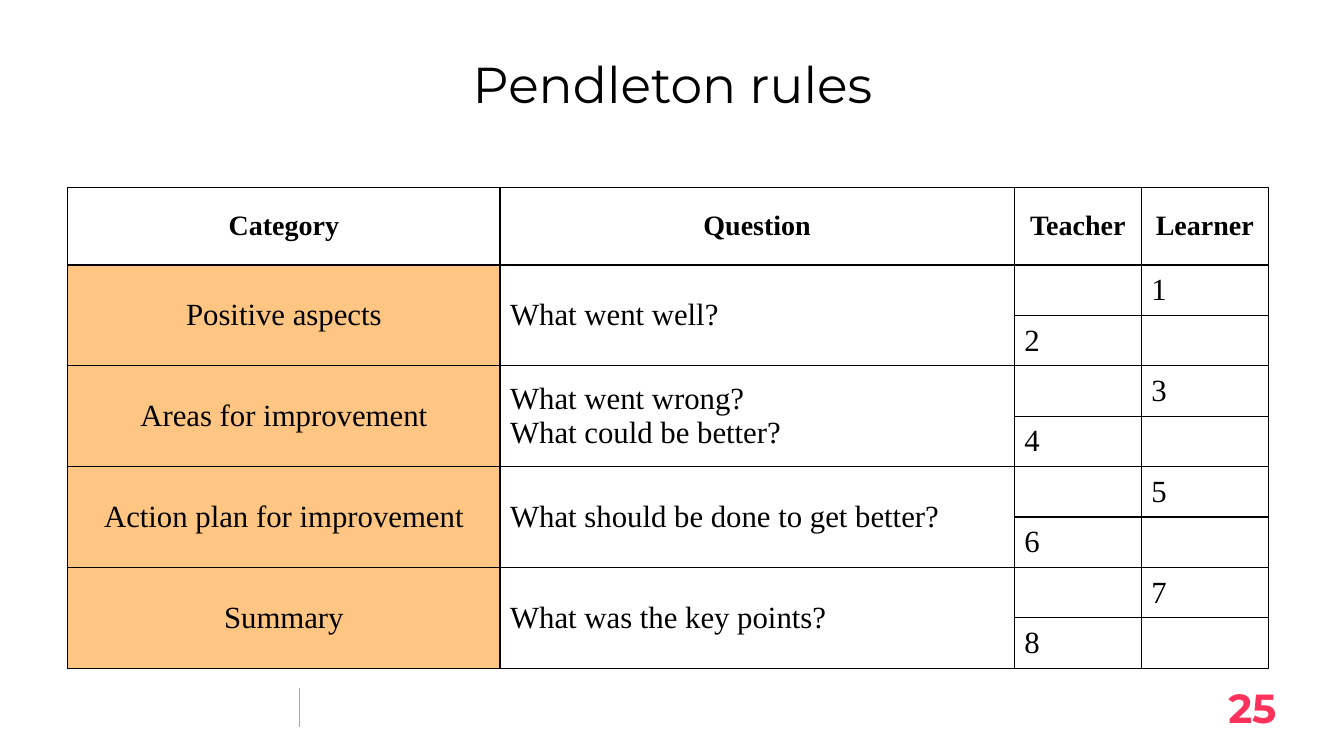
from lxml.etree import SubElement as Sub
from pptx import Presentation as Deck
from pptx.dml.color import RGBColor as RGB
from pptx.enum.shapes import MSO_CONNECTOR as Link
from pptx.enum.text import MSO_ANCHOR as Anchor, PP_ALIGN as Align
from pptx.oxml.ns import qn
from pptx.util import Inches, Pt

BLACK = RGB(0, 0, 0)
WHITE = RGB(255, 255, 255)
PEACH = RGB(0xFF, 0xC5, 0x82)
PINK = RGB(0xFE, 0x32, 0x5A)
GRAY = RGB(0xA6, 0xA6, 0xA6)
SANS = "Montserrat"
SERIF = "Times New Roman"
HEADS = ["Category", "Question", "Teacher", "Learner"]
TOPICS = [
    ("Positive aspects", "What went well?"),
    ("Areas for improvement", "What went wrong?\nWhat could be better?"),
    ("Action plan for improvement", "What should be done to get better?"),
    ("Summary", "What was the key points?"),
]
WIDTHS = [4.29, 5.1, 1.26, 1.26]
HEIGHTS = [0.77] + [0.5] * 8


def write(frame, text, size=22, font=SERIF, color=BLACK, bold=False, align=Align.LEFT):
    frame.text = text
    for para in frame.paragraphs:
        para.alignment = align
        face = para.font
        face.size, face.name, face.bold = Pt(size), font, bold
        face.color.rgb = color


def place(shape, left, top, width, height):
    shape.left, shape.top = Inches(left), Inches(top)
    shape.width, shape.height = Inches(width), Inches(height)


def label(shape, text, **style):
    frame = shape.text_frame
    frame.word_wrap = True
    frame.vertical_anchor = Anchor.MIDDLE
    frame.margin_left = frame.margin_right = 0
    frame.margin_top = frame.margin_bottom = Inches(0.07)
    write(frame, text, font=SANS, **style)


def rule(slide, left, top, end):
    line = slide.shapes.add_connector(
        Link.STRAIGHT, Inches(left), Inches(top), Inches(left), Inches(end))
    line.line.color.rgb = GRAY
    line.line.width = Pt(0.75)
    Sub(line.element.spPr, qn("a:effectLst"))


def border(cell):
    props = cell._tc.get_or_add_tcPr()
    for side in ("lnL", "lnR", "lnT", "lnB"):
        edge = Sub(props, qn("a:" + side), w=str(Pt(1)))
        fill = Sub(edge, qn("a:solidFill"))
        Sub(fill, qn("a:srgbClr"), val=str(BLACK))


def grid(slide):
    shape = slide.shapes.add_table(
        len(HEIGHTS), len(WIDTHS), Inches(0.67), Inches(1.86),
        Inches(sum(WIDTHS)), Inches(sum(HEIGHTS)))
    table = shape.table
    for col, width in zip(table.columns, WIDTHS):
        col.width = Inches(width)
    for row, height in zip(table.rows, HEIGHTS):
        row.height = Inches(height)
    for r in range(len(HEIGHTS)):
        for c in range(len(WIDTHS)):
            cell = table.cell(r, c)
            border(cell)
            cell.fill.solid()
            cell.fill.fore_color.rgb = PEACH if r and c == 0 else WHITE
            cell.vertical_anchor = Anchor.MIDDLE
    for c, head in enumerate(HEADS):
        write(table.cell(0, c).text_frame, head, size=20, bold=True, align=Align.CENTER)
    for i, pair in enumerate(TOPICS):
        top = 2 * i + 1
        for c, (text, align) in enumerate(zip(pair, (Align.CENTER, Align.JUSTIFY))):
            cell = table.cell(top, c)
            cell.merge(table.cell(top + 1, c))
            write(cell.text_frame, text, align=align)
        write(table.cell(top, 3).text_frame, str(top))
        write(table.cell(top + 1, 2).text_frame, str(top + 1))


def main():
    deck = Deck()
    deck.slide_width, deck.slide_height = Inches(13.33), Inches(7.5)
    slide = deck.slides.add_slide(deck.slide_layouts[5])
    rule(slide, 2.97, 6.83, 7.21)
    title = slide.shapes.title
    place(title, 0.67, 0.44, 12, 0.78)
    label(title, "Pendleton rules", size=36, align=Align.CENTER)
    page = slide.shapes.add_textbox(
        Inches(9.55), Inches(6.82), Inches(3.11), Inches(0.4))
    label(page, "25", size=29, color=PINK, bold=True, align=Align.RIGHT)
    grid(slide)
    deck.save("out.pptx")


if __name__ == "__main__":
    main()
